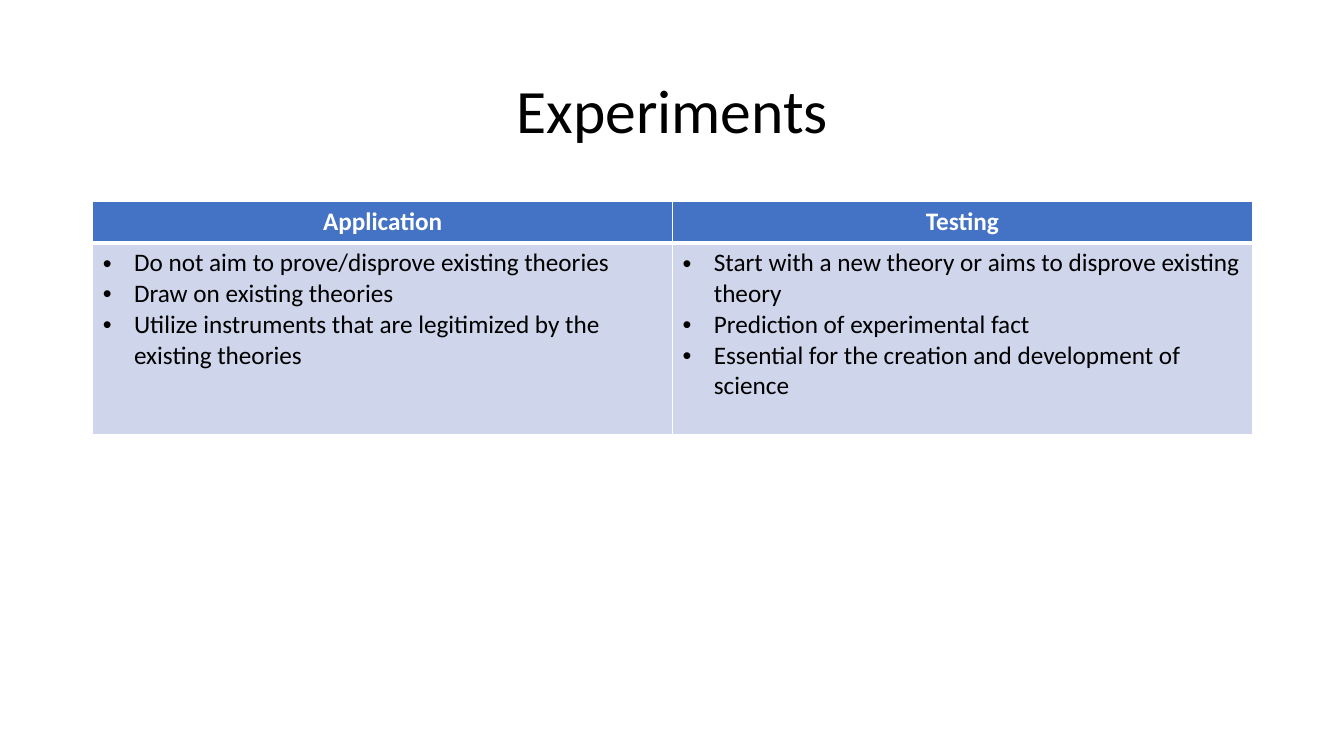
from dataclasses import dataclass

from lxml.etree import SubElement
from pptx import Presentation
from pptx.dml.color import RGBColor
from pptx.enum.text import MSO_ANCHOR, PP_ALIGN
from pptx.oxml.ns import qn
from pptx.util import Inches, Pt


@dataclass(frozen=True)
class Theme:
    font: str = "Calibri"
    title_size: int = 44
    body_size: int = 18
    text: str = "000000"
    white: str = "FFFFFF"
    header_fill: str = "4472C4"
    body_fill: str = "CFD5EA"
    thin_line: int = 1
    thick_line: int = 3


LEFT, WIDTH = 0.92, 11.5
HEADER_HEIGHT, BODY_HEIGHT = 0.41, 1.9
BULLET_INDENT = 0.31

EXPERIMENTS = {
    "Application": [
        "Do not aim to prove/disprove existing theories",
        "Draw on existing theories",
        "Utilize instruments that are legitimized by the existing theories",
    ],
    "Testing": [
        "Start with a new theory or aims to disprove existing theory",
        "Prediction of experimental fact",
        "Essential for the creation and development of science",
    ],
}


class SlideBuilder:
    def __init__(self, slide, theme):
        self.slide = slide
        self.theme = theme

    def add_text(self, paragraph, text, size, color, bold=False):
        run = paragraph.add_run()
        run.text = text
        formats = {"name": self.theme.font, "size": Pt(size), "bold": bold}
        for name, value in formats.items():
            setattr(run.font, name, value)
        run.font.color.rgb = RGBColor.from_string(color)

    def add_title(self, text, left, top, width, height):
        box = self.slide.shapes.add_textbox(
            Inches(left), Inches(top), Inches(width), Inches(height))
        frame = box.text_frame
        frame.word_wrap = True
        frame.vertical_anchor = MSO_ANCHOR.MIDDLE
        paragraph = frame.paragraphs[0]
        paragraph.alignment = PP_ALIGN.CENTER
        paragraph.line_spacing = 0.9
        self.add_text(paragraph, text, self.theme.title_size, self.theme.text)

    def add_bullet(self, paragraph):
        properties = paragraph._p.get_or_add_pPr()
        indent = Inches(BULLET_INDENT)
        properties.set("marL", str(indent))
        properties.set("indent", str(-indent))
        SubElement(properties, qn("a:buFont"), typeface="Arial")
        SubElement(properties, qn("a:buChar"), char="•")

    def style_cell(self, cell, fill, thick_side):
        """Draw white borders, thicker on thick_side, and fill the cell."""
        properties = cell._tc.get_or_add_tcPr()
        for side in ("lnL", "lnR", "lnT", "lnB"):
            points = self.theme.thick_line if side == thick_side else self.theme.thin_line
            line = SubElement(properties, qn(f"a:{side}"), w=str(Pt(points)))
            solid = SubElement(line, qn("a:solidFill"))
            SubElement(solid, qn("a:srgbClr"), val=self.theme.white)
        cell.fill.solid()
        cell.fill.fore_color.rgb = RGBColor.from_string(fill)

    def add_table(self, columns, left, top, width):
        theme = self.theme
        table = self.slide.shapes.add_table(
            2, len(columns), Inches(left), Inches(top), Inches(width),
            Inches(HEADER_HEIGHT + BODY_HEIGHT)).table
        for row, height in zip(table.rows, (HEADER_HEIGHT, BODY_HEIGHT)):
            row.height = Inches(height)
        for index, (heading, points) in enumerate(columns.items()):
            table.columns[index].width = Inches(width / len(columns))
            header, body = table.cell(0, index), table.cell(1, index)
            self.style_cell(header, theme.header_fill, "lnB")
            self.style_cell(body, theme.body_fill, "lnT")
            paragraph = header.text_frame.paragraphs[0]
            paragraph.alignment = PP_ALIGN.CENTER
            self.add_text(paragraph, heading, theme.body_size, theme.white, bold=True)
            frame = body.text_frame
            for number, point in enumerate(points):
                paragraph = frame.add_paragraph() if number else frame.paragraphs[0]
                self.add_bullet(paragraph)
                self.add_text(paragraph, point, theme.body_size, theme.text)


def main():
    presentation = Presentation()
    presentation.slide_width = Inches(13.33)
    presentation.slide_height = Inches(7.5)
    slide = presentation.slides.add_slide(presentation.slide_layouts[6])
    builder = SlideBuilder(slide, Theme())
    builder.add_title("Experiments", LEFT, 0.4, WIDTH, 1.45)
    builder.add_table(EXPERIMENTS, LEFT, 2, WIDTH)
    presentation.save("out.pptx")


if __name__ == "__main__":
    main()
